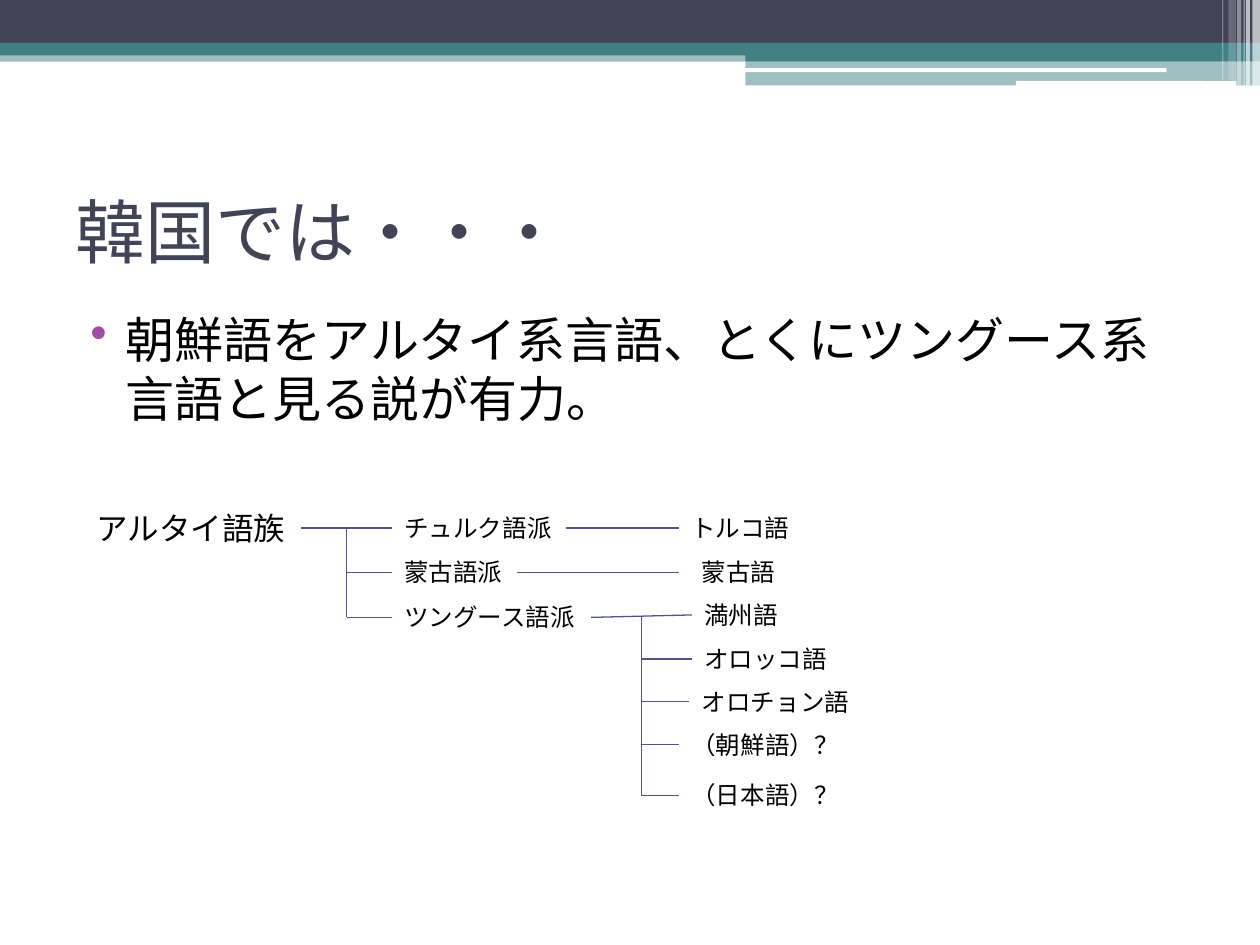
from lxml.etree import SubElement
from pptx import Presentation
from pptx.dml.color import RGBColor
from pptx.enum.shapes import MSO_CONNECTOR as Connector, MSO_SHAPE as Shape
from pptx.enum.text import MSO_ANCHOR as Anchor, MSO_AUTO_SIZE as AutoSize
from pptx.oxml.ns import qn
from pptx.util import Pt

COLORS = {"navy": "424456", "teal": "438086", "white": "FFFFFF",
          "black": "000000", "bullet": "A04DA3", "branch": "53548A"}
HEADING, BODY = "Karla", "TeX Gyre Schola"
LEFT, RIGHT = 1, 3

deck = Presentation()
deck.slide_width, deck.slide_height = Pt(720), Pt(540)
slide = deck.slides.add_slide(deck.slide_layouts[6])


def add_text(text, left, top, width, height, size, font=BODY, color="black",
             wrap=False, anchor=Anchor.TOP, fit=AutoSize.SHAPE_TO_FIT_TEXT):
    box = slide.shapes.add_textbox(Pt(left), Pt(top), Pt(width), Pt(height))
    frame = box.text_frame
    frame.word_wrap, frame.vertical_anchor, frame.auto_size = wrap, anchor, fit
    run = frame.paragraphs[0].add_run()
    run.text = text
    run.font.size, run.font.name = Pt(size), font
    run.font.color.rgb = RGBColor.from_string(COLORS[color])
    SubElement(run.font._element, qn("a:ea")).set("typeface", font)
    return box


def add_branch(start, end):
    line = slide.shapes.add_connector(
        Connector.STRAIGHT, *(Pt(v) for v in (*start, *end)))
    line.line.color.rgb = RGBColor.from_string(COLORS["branch"])
    line.line.width = Pt(0.75)
    SubElement(line._element.spPr, qn("a:effectLst"))
    return line


BAR, ROUND = Shape.RECTANGLE, Shape.ROUNDED_RECTANGLE
header_bands = [
    (BAR, 0, 28.8, 720, 6.5, "teal", 50),
    (BAR, 0, 0, 720, 24.5, "navy", 100),
    (BAR, 0, 24.5, 720, 7.2, "teal", 100),
    (BAR, 426, 28, 294, 7, "teal", 100),
    (BAR, 426, 34.6, 294, 14.2, "teal", 50),
    (ROUND, 425.5, 39, 241.2, 2.2, "white", 100),
    (ROUND, 580.5, 46.3, 126, 2.8, "white", 100),
]
corner_stripes = [(715.7, 4.3, 49, 65), (712, 2.2, 49, 65), (710.6, 0.7, 49, 60),
                  (707, 2.2, 49, 40), (702, 4.3, 46, 20), (698.4, 0.7, 46, 30)]
header_bands += [(BAR, left, 0, width, height, "white", opacity)
                 for left, width, height, opacity in corner_stripes]

for kind, left, top, width, height, color, opacity in header_bands:
    band = slide.shapes.add_shape(kind, Pt(left), Pt(top), Pt(width), Pt(height))
    band.shadow.inherit = False
    band.line.fill.background()
    band.fill.solid()
    band.fill.fore_color.rgb = RGBColor.from_string(COLORS[color])
    if opacity < 100:
        tint = band._element.spPr.find(qn("a:solidFill"))[0]
        SubElement(tint, qn("a:alpha")).set("val", str(opacity * 1000))

add_text("韓国では・・・", 36, 90, 648, 84, 40, font=HEADING, color="navy",
         wrap=True, anchor=Anchor.MIDDLE, fit=AutoSize.NONE)
claim = add_text("朝鮮語をアルタイ系言語、とくにツングース系言語と見る説が有力。",
                 36, 173.5, 636, 93, 28, wrap=True, fit=AutoSize.NONE)
claim_line = claim.text_frame.paragraphs[0]
claim_line.space_before = Pt(3)
claim_format = claim_line._p.get_or_add_pPr()
claim_format.set("marL", str(Pt(28.8)))
claim_format.set("indent", str(-Pt(20.2)))
bullet_color = SubElement(claim_format, qn("a:buClr"))
SubElement(bullet_color, qn("a:srgbClr")).set("val", COLORS["bullet"])
SubElement(claim_format, qn("a:buChar")).set("char", "•")

languages = [
    ("アルタイ語族", 48.2, 301.7, 18),
    ("チュルク語派", 224, 301.7, 14),
    ("蒙古語派", 224, 327, 14),
    ("ツングース語派", 224, 352.8, 14),
    ("トルコ語", 388, 301.7, 14),
    ("蒙古語", 394, 327, 14),
    ("満州語", 395.3, 351.4, 14),
    ("オロッコ語", 395.3, 376.6, 14),
    ("オロチョン語", 394, 401, 14),
    ("（朝鮮語）？", 388, 425.5, 14),
    ("（日本語）？", 388, 454.5, 14),
]
nodes, middles = {}, {}
for name, left, middle, size in languages:
    width = round(len(name) * size * 1.014 + 14.4, 2)
    height = round(size * 1.22 + 7.2, 2)
    nodes[name] = add_text(name, left, middle - height / 2, width, height, size)
    middles[name] = middle

for parent, child in [("アルタイ語族", "チュルク語派"), ("チュルク語派", "トルコ語"),
                      ("ツングース語派", "満州語")]:
    link = add_branch((0, 0), (0, 0))
    link.begin_connect(nodes[parent], RIGHT)
    link.end_connect(nodes[child], LEFT)

mongol_link = add_branch((295.2, 327), (388, 327))
mongol_link.begin_connect(nodes["蒙古語派"], RIGHT)

trunks = [
    (198, 301.7, ["蒙古語派", "ツングース語派"]),
    (366.5, 352.1, ["オロッコ語", "オロチョン語", "（朝鮮語）？", "（日本語）？"]),
]
for trunk, top, children in trunks:
    add_branch((trunk, top), (trunk, middles[children[-1]]))
    for child in children:
        twig = add_branch((trunk, middles[child]), (trunk, middles[child]))
        twig.end_connect(nodes[child], LEFT)

deck.save("out.pptx")
